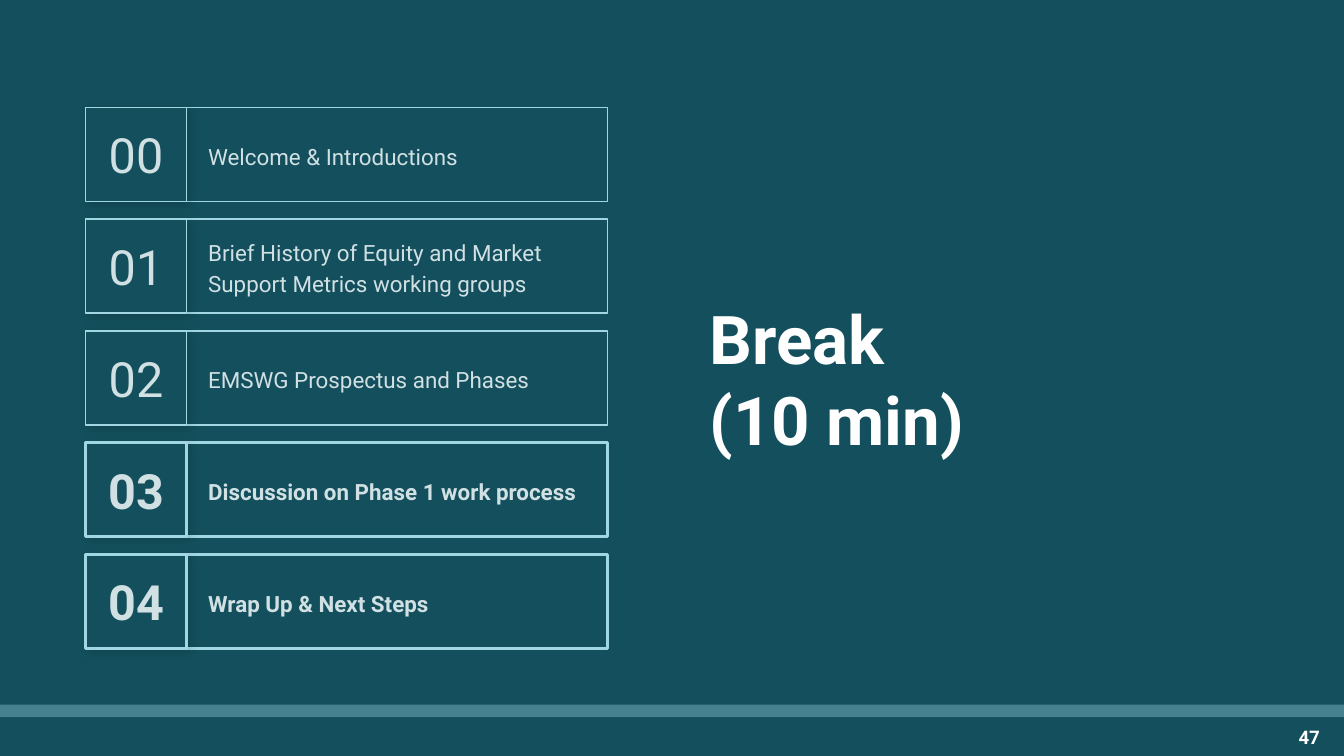
import pptx
import pptx.util
import pptx.dml.color
import pptx.enum.shapes
import pptx.enum.text
import pptx.oxml.ns
import lxml.etree

COLS, ROWS = 1600, 900
UNIT = pptx.util.Inches(10) // COLS
DARK, TEAL, EDGE, PALE, WHITE = "134F5C", "45818E", "A1D6E3", "D0E0E3", "FFFFFF"
ALIGN = pptx.enum.text.PP_ALIGN

AGENDA = [
    ("Welcome & Introductions", False),
    ("Brief History of Equity and Market Support Metrics working groups", False),
    ("EMSWG Prospectus and Phases", False),
    ("Discussion on Phase 1 work process", True),
    ("Wrap Up & Next Steps", True),
]


def color(value):
    return pptx.dml.color.RGBColor.from_string(value)


def grid(box):
    return [n * UNIT for n in box]


def add_text(s, lines, size, ink, bold, align=ALIGN.LEFT, spacing=1.0):
    tf = s.text_frame
    frame_format = {"word_wrap": True, "vertical_anchor": pptx.enum.text.MSO_ANCHOR.MIDDLE}
    frame_format.update({f"margin_{side}": pptx.util.Inches(0.1)
                         for side in ("left", "right", "top", "bottom")})
    for name, value in frame_format.items():
        setattr(tf, name, value)
    for i, line in enumerate(lines):
        p = tf.add_paragraph() if i else tf.paragraphs[0]
        p.alignment, p.line_spacing = align, spacing
        r = p.add_run()
        r.text = line
        font_format = {"name": "Roboto", "size": pptx.util.Pt(size), "bold": bold}
        for name, value in font_format.items():
            setattr(r.font, name, value)
        r.font.color.rgb = color(ink)


def add_rect(slide, box, fill=DARK, line_width=0):
    s = slide.shapes.add_shape(pptx.enum.shapes.MSO_SHAPE.RECTANGLE, *grid(box))
    s.shadow.inherit = False
    s.fill.solid()
    s.fill.fore_color.rgb = color(fill)
    if line_width:
        s.line.color.rgb = color(EDGE)
        s.line.width = pptx.util.Pt(line_width)
    else:
        s.line.fill.background()
    return s


def cast_shadow(s):
    qn = pptx.oxml.ns.qn
    effects = s._element.spPr.find(qn("a:effectLst"))
    shadow = lxml.etree.SubElement(effects, qn("a:outerShdw"), {
        "blurRad": str(pptx.util.Pt(5.6)), "dist": str(pptx.util.Pt(2.2)),
        "dir": str(45 * 60000), "algn": "bl", "rotWithShape": "0"})
    black = lxml.etree.SubElement(shadow, qn("a:srgbClr"), val="000000")
    lxml.etree.SubElement(black, qn("a:alpha"), val="17000")


def add_agenda_row(slide, box, number, label, bold):
    x, y, w, h = box
    number_w = 120
    label_x = x + number_w
    label_w = w - number_w
    line_width = 1.5 if bold else 0.75
    add_rect(slide, (label_x, y, label_w, h), line_width=line_width)
    s = add_rect(slide, (label_x + 10, y + 13, label_w - 31, h - 26))
    add_text(s, [label], 12, PALE, bold, spacing=1.15)
    number_box = (x, y, number_w, h)
    cast_shadow(add_rect(slide, number_box))
    s = add_rect(slide, number_box, line_width=line_width)
    add_text(s, [f"{number:02d}"], 26, PALE, bold, ALIGN.CENTER)


def add_agenda(slide, box):
    x, y, w, h = box
    gap = 21
    row_h = (h - gap * (len(AGENDA) - 1)) // len(AGENDA)
    for i, (label, bold) in enumerate(AGENDA):
        add_agenda_row(slide, (x, y + i * (row_h + gap), w, row_h), i, label, bold)


def add_title(slide, box):
    s = slide.shapes.add_textbox(*grid(box))
    add_text(s, ["Break", "(10 min)"], 36, WHITE, True)


def add_footer(slide, box):
    x, y, w, h = box
    band_h = 15
    add_rect(slide, (x, y, w, band_h), fill=TEAL)
    s = slide.shapes.add_textbox(*grid((x + w - 109, y + band_h, 96, h - band_h)))
    add_text(s, ["47"], 10, WHITE, True, ALIGN.RIGHT)


def main():
    prs = pptx.Presentation()
    prs.slide_width, prs.slide_height = grid((COLS, ROWS))
    slide = prs.slides.add_slide(prs.slide_layouts[6])
    slide.background.fill.solid()
    slide.background.fill.fore_color.rgb = color(DARK)
    add_footer(slide, (0, 839, COLS, ROWS - 839))
    add_title(slide, (829, 288, 720, 325))
    add_agenda(slide, (102, 128, 621, 644))
    prs.save("out.pptx")


if __name__ == "__main__":
    main()
